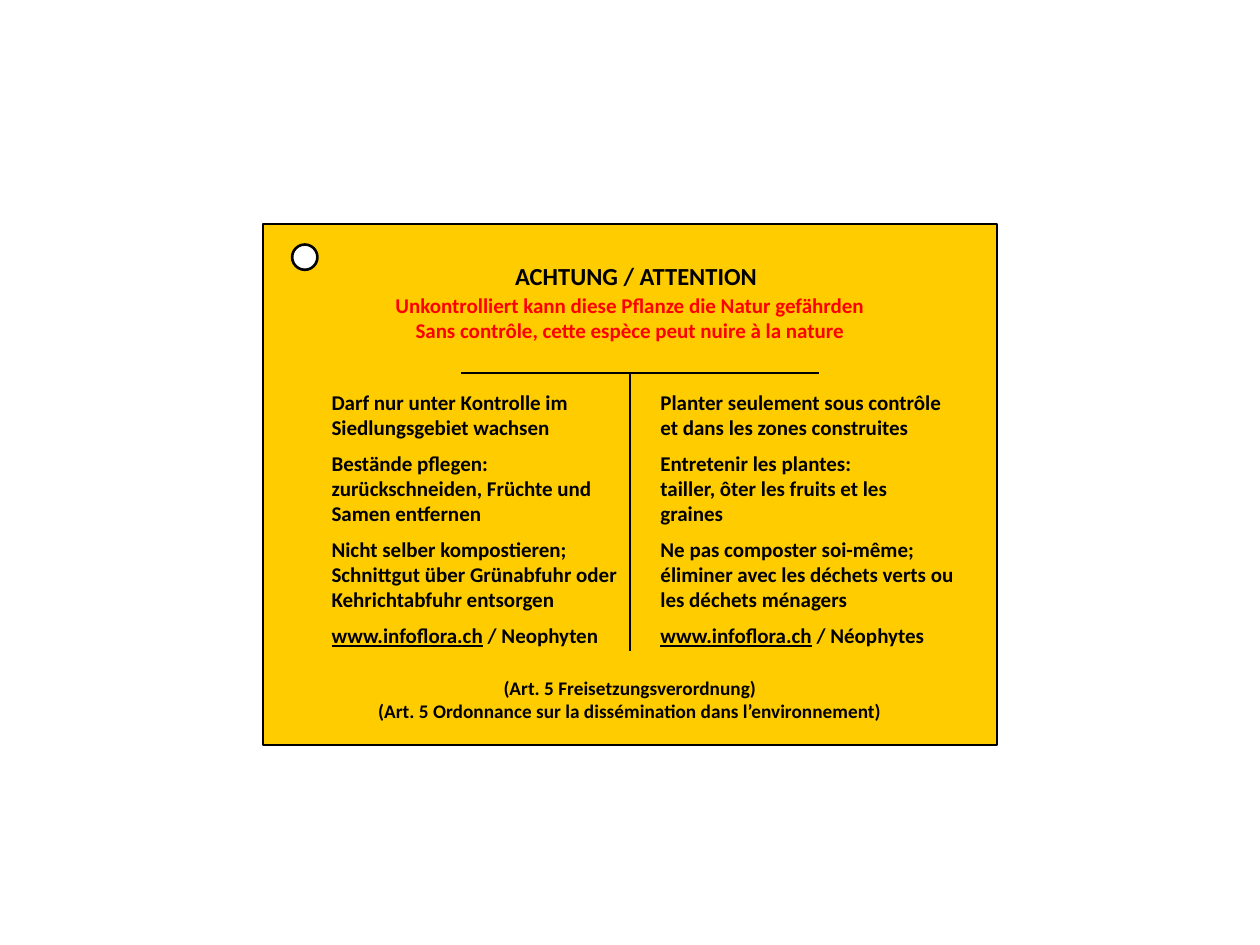
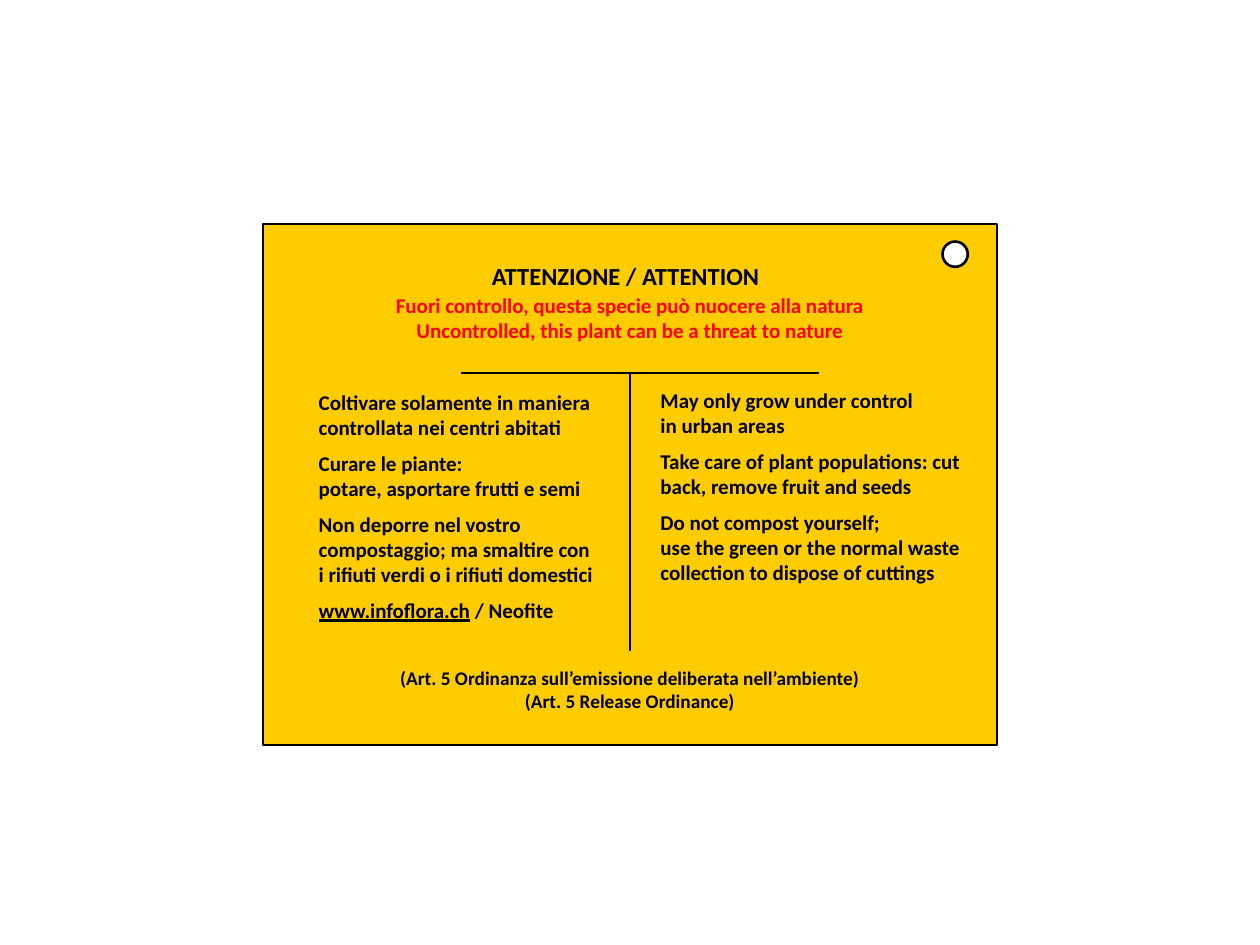
from lxml import etree
from pptx import Presentation
from pptx.dml.color import RGBColor
from pptx.enum.shapes import MSO_CONNECTOR, MSO_SHAPE
from pptx.enum.text import MSO_ANCHOR, MSO_AUTO_SIZE, PP_ALIGN
from pptx.oxml.ns import qn
from pptx.util import Cm, Pt

LEFT, CENTER = PP_ALIGN.LEFT, PP_ALIGN.CENTER
TOP = MSO_ANCHOR.TOP
NO_AUTOFIT = MSO_AUTO_SIZE.NONE
STRAIGHT = MSO_CONNECTOR.STRAIGHT
RECTANGLE, OVAL = MSO_SHAPE.RECTANGLE, MSO_SHAPE.OVAL
TWO_CONTENT = 3

PAGE_WIDTH, PAGE_HEIGHT = 25.4, 19.05
CARD_WIDTH, CARD_HEIGHT, CARD_TOP = 14.8, 10.5, 4.52
MIDDLE = PAGE_WIDTH / 2
WEBSITE = "www.infoflora.ch"

SIGNS = [
    {
        "title": "ACHTUNG / ATTENTION",
        "title_left": 10.13,
        "warning": ["Unkontrolliert kann diese Pflanze die Natur gefährden",
                    "Sans contrôle, cette espèce peut nuire à la nature"],
        "columns": [
            (6.43, 7.72, 6.3,
             ["Darf nur unter Kontrolle im\nSiedlungsgebiet wachsen",
              "Bestände pflegen: zurückschneiden, Früchte und Samen entfernen",
              "Nicht selber kompostieren; Schnittgut über Grünabfuhr oder "
              "Kehrichtabfuhr entsorgen",
              WEBSITE + " / Neophyten"]),
            (13.06, 7.72, 6.5,
             ["Planter seulement sous contrôle et dans les zones construites",
              "Entretenir les plantes:\ntailler, ôter les fruits et les\ngraines",
              "Ne pas composter soi-même; éliminer avec les déchets verts ou "
              "les déchets ménagers",
              WEBSITE + " / Néophytes"]),
        ],
        "law": ["(Art. 5 Freisetzungsverordnung)",
                "(Art. 5 Ordonnance sur la dissémination dans l’environnement)"],
        "law_top": 13.51,
        "hole": (5.89, 4.93),
    },
    {
        "title": "ATTENZIONE / ATTENTION",
        "title_left": 9.66,
        "warning": ["Fuori controllo, questa specie può nuocere alla natura",
                    "Uncontrolled, this plant can be a threat to nature"],
        "columns": [
            (6.17, 7.72, 6.3,
             ["Coltivare solamente in maniera controllata nei centri abitati",
              "Curare le piante:\npotare, asportare frutti e semi",
              "Non deporre nel vostro compostaggio; ma smaltire con\n"
              "i rifiuti verdi o i rifiuti domestici",
              WEBSITE + " / Neofite"]),
            (13.06, 7.69, 6.65,
             ["May only grow under control\nin urban areas",
              "Take care of plant populations: cut back, remove fruit and seeds",
              "Do not compost yourself;\nuse the green or the normal waste "
              "collection to dispose of cuttings"]),
        ],
        "law": ["(Art. 5 Ordinanza sull’emissione deliberata nell’ambiente)",
                "(Art. 5 Release Ordinance)"],
        "law_top": 13.3,
        "hole": (19.0, 4.87),
    },
]


def rgb(value):
    return RGBColor.from_string(value)


class SignDeck:
    font = "Calibri"
    ink, alert, yellow, white = "000000", "FF0000", "FFCC00", "FFFFFF"
    outline = Pt(1.5)

    def __init__(self):
        self.deck = Presentation()
        self.deck.slide_width = Cm(PAGE_WIDTH)
        self.deck.slide_height = Cm(PAGE_HEIGHT)
        self.slide = None

    def new_slide(self):
        layout = self.deck.slide_layouts[TWO_CONTENT]
        self.slide = self.deck.slides.add_slide(layout)

    def add_text(self, paragraph, text, size, color, underline=False):
        run = paragraph.add_run()
        run.text = text
        run.font.name = self.font
        run.font.size = Pt(size)
        run.font.bold = True
        run.font.underline = underline
        run.font.color.rgb = rgb(color)

    def fill_frame(self, frame, texts, size, color=ink, align=LEFT, gap=0, wrap=True):
        frame.auto_size = NO_AUTOFIT
        frame.word_wrap = wrap
        frame.vertical_anchor = TOP
        for index, text in enumerate(texts):
            paragraph = frame.add_paragraph() if index else frame.paragraphs[0]
            paragraph.alignment = align
            paragraph.space_before = Pt(gap if index else 0)
            for number, line in enumerate(text.split("\n")):
                if number:
                    paragraph.add_line_break()
                if line.startswith(WEBSITE):
                    self.add_text(paragraph, WEBSITE, size, color, underline=True)
                    line = line[len(WEBSITE):]
                self.add_text(paragraph, line, size, color)

    def place(self, shape, left, top, width, height):
        shape.left, shape.top = Cm(left), Cm(top)
        shape.width, shape.height = Cm(width), Cm(height)

    def title(self, text, left):
        title = self.slide.shapes.title
        self.place(title, left, 5.13, 6.1, 0.86)
        self.fill_frame(title.text_frame, [text], 14, wrap=False)

    def column(self, index, left, top, width, texts):
        column = self.slide.placeholders[index]
        self.place(column, left, top, width, 5.5)
        self.fill_frame(column.text_frame, texts, 12, gap=6)
        for paragraph in column.text_frame.paragraphs:
            properties = paragraph._p.get_or_add_pPr()
            properties.set("marL", "0")
            properties.set("indent", "0")
            etree.SubElement(properties, qn("a:buNone"))

    def shape(self, kind, left, top, width, height, fill):
        shape = self.slide.shapes.add_shape(
            kind, Cm(left), Cm(top), Cm(width), Cm(height))
        shape.shadow.inherit = False
        shape.fill.solid()
        shape.fill.fore_color.rgb = rgb(fill)
        shape.line.color.rgb = rgb(self.ink)
        shape.line.width = self.outline
        return shape

    def card(self, warning):
        card = self.shape(RECTANGLE, (PAGE_WIDTH - CARD_WIDTH) / 2, CARD_TOP,
                          CARD_WIDTH, CARD_HEIGHT, self.yellow)
        card.text_frame.margin_top = Cm(1.38)
        self.fill_frame(card.text_frame, warning, 12, self.alert, CENTER)
        self.slide.shapes._spTree.insert(2, card._element)

    def line(self, x1, y1, x2, y2):
        line = self.slide.shapes.add_connector(
            STRAIGHT, Cm(x1), Cm(y1), Cm(x2), Cm(y2))
        line.line.color.rgb = rgb(self.ink)
        line.line.width = self.outline
        etree.SubElement(line._element.spPr, qn("a:effectLst"))

    def law(self, texts, top):
        width = 12.6
        law = self.slide.shapes.add_textbox(
            Cm(MIDDLE - width / 2), Cm(top), Cm(width), Cm(1.2))
        self.fill_frame(law.text_frame, texts, 11, align=CENTER)

    def hole(self, left, top):
        self.shape(OVAL, left, top, 0.51, 0.51, self.white)

    def sign(self, content):
        self.new_slide()
        self.card(content["warning"])
        self.line(MIDDLE, 7.52, MIDDLE, 13.12)
        self.line(9.29, 7.52, 16.51, 7.52)
        self.title(content["title"], content["title_left"])
        for index, column in enumerate(content["columns"], start=1):
            self.column(index, *column)
        self.law(content["law"], content["law_top"])
        self.hole(*content["hole"])


def main():
    signs = SignDeck()
    for content in SIGNS:
        signs.sign(content)
    signs.deck.save("out.pptx")


if __name__ == "__main__":
    main()
